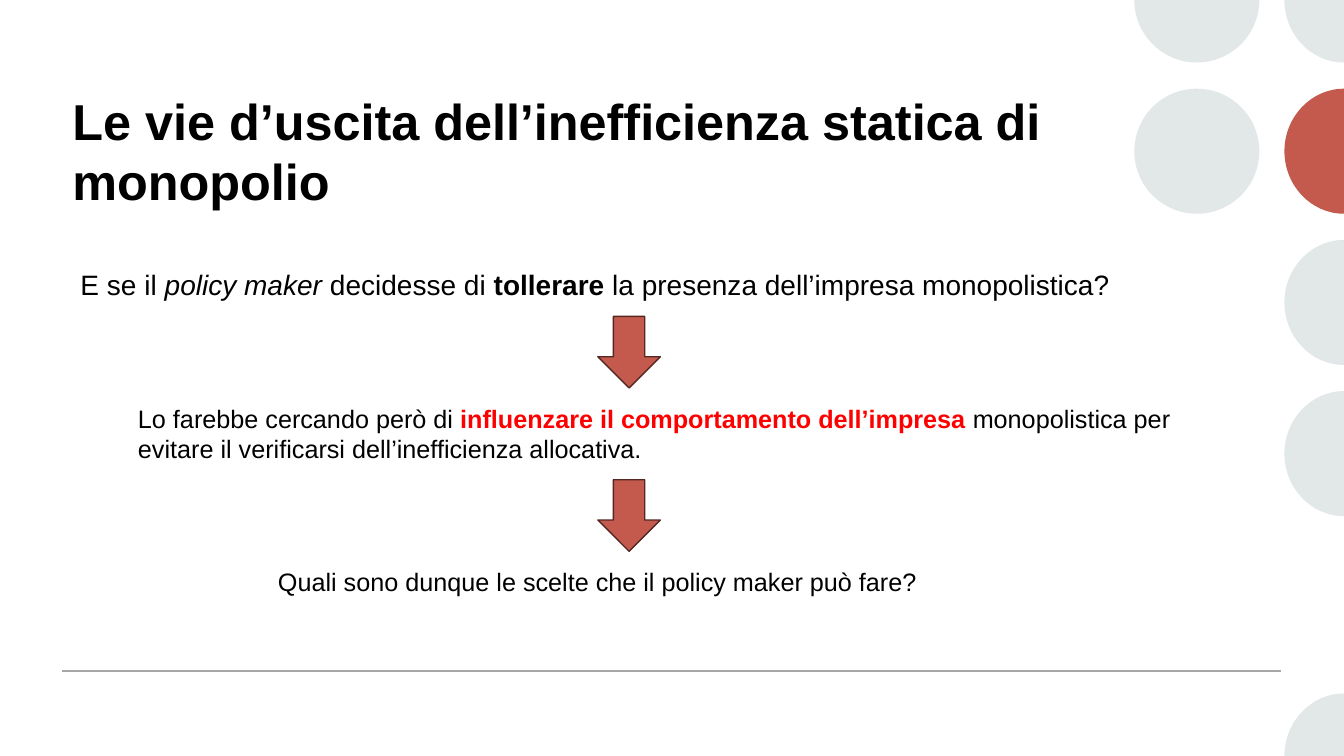
from pptx import Presentation
from pptx.dml.color import RGBColor
from pptx.enum.shapes import MSO_CONNECTOR, MSO_SHAPE
from pptx.enum.text import MSO_ANCHOR
from pptx.oxml.ns import qn
from pptx.util import Inches, Pt

THEME = {
    "font": "Arial",
    "title": 36, "question": 20, "body": 18,
    "text": RGBColor(0x00, 0x00, 0x00),
    "emphasis": RGBColor(0xFF, 0x00, 0x00),
    "pale": RGBColor(0xE2, 0xE7, 0xE8),
    "accent": RGBColor(0xC3, 0x5A, 0x4D),
    "outline": RGBColor(0x55, 0x27, 0x22),
    "rule": RGBColor(0xA6, 0xA6, 0xA6),
}

deck = Presentation()
deck.slide_width, deck.slide_height = Inches(13.333), Inches(7.5)
page = deck.slides.add_slide(deck.slide_layouts[6])
# The grid has 100 columns and 100 rows.
column, row = deck.slide_width / 100, deck.slide_height / 100


def cells(left, top, width, height):
    """Turn grid columns and rows into slide lengths."""
    return [round(length) for length in
            (left * column, top * row, width * column, height * row)]


def add_text(place, *runs, size, bold=False, anchor=MSO_ANCHOR.TOP, bottom=0.05):
    """Add one paragraph; each run is a (text, format) pair."""
    box = page.shapes.add_textbox(*place)
    box.text_frame.word_wrap = True
    box.text_frame.vertical_anchor = anchor
    box.text_frame.margin_bottom = Inches(bottom)
    para = box.text_frame.paragraphs[0]
    for text, style in runs:
        span = para.add_run()
        span.text = text
        span.font.name = THEME["font"]
        span.font.size = Pt(size)
        span.font.bold = style.get("bold", bold)
        span.font.italic = style.get("italic", False)
        span.font.color.rgb = style.get("color", THEME["text"])


# Circles: a whole one, then those cut at the slide's edge, made of quarter arcs
radius, reach, cut_reach, bend = 8.27, 4.65, 4.43, 0.55
compass = {"N": (0, -1), "W": (-1, 0), "S": (0, 1), "E": (1, 0)}
circles = [(89.05, 20, "NWSE", "pale"), (89.05, 0, "WSE", "pale"),
           (100, 100, "NW", "pale"), (100, 60, "NWS", "pale"),
           (100, 40, "NWS", "pale"), (100, 20, "NWS", "accent"),
           (100, 0, "WS", "pale")]
for x, y, sides, color in circles:
    if sides == "NWSE":
        circle = page.shapes.add_shape(
            MSO_SHAPE.OVAL, *cells(x - reach, y - radius, 2 * reach, 2 * radius))
    else:
        across = cut_reach if x == 100 else reach
        knots = [compass[side] for side in sides]
        points = [knots[0]]
        for (ax, ay), (bx, by) in zip(knots, knots[1:]):
            points += [(ax + bend * bx, ay + bend * by),
                       (bx + bend * ax, by + bend * ay), (bx, by)]
        if len(sides) == 2:
            points.append((0, 0))
        places = [(round((x + across * px) * column), round((y + radius * py) * row))
                  for px, py in points]
        outline = page.shapes.build_freeform(*places[0])
        outline.add_line_segments(places[1:], close=True)
        circle = outline.convert_to_shape()
        # Every three line ends become one Bezier arc.
        lines = list(circle._element.iter(qn("a:lnTo")))
        for start in range(0, 3 * (len(sides) - 1), 3):
            arc = lines[start].makeelement(qn("a:cubicBezTo"), {})
            lines[start].addprevious(arc)
            for line in lines[start:start + 3]:
                arc.append(line[0])
                line.getparent().remove(line)
    circle.shadow.inherit = False
    circle.fill.solid()
    circle.fill.fore_color.rgb = THEME[color]
    circle.line.fill.background()

left, level, right, _ = cells(4.65, 88.75, 95.35, 0)
footer_rule = page.shapes.add_connector(MSO_CONNECTOR.STRAIGHT, left, level, right, level)
footer_rule.line.color.rgb = THEME["rule"]
footer_rule.line.width = Pt(1)
properties = footer_rule._element.spPr
properties.append(properties.makeelement(qn("a:effectLst"), {}))

add_text(cells(4.65, 11.2, 77.34, 18.53),
         ("Le vie d’uscita dell’inefficienza statica di monopolio", {}),
         size=THEME["title"], bold=True, anchor=MSO_ANCHOR.MIDDLE, bottom=0.14)

# Statements stacked with an arrow between neighbours
arrow_height, gap = 9.47, 1.33
statements = [
    (5.25, 80.94, 5.8, THEME["question"], [
        ("E se il ", {}),
        ("policy maker ", {"italic": True}),
        ("decidesse di ", {}),
        ("tollerare", {"bold": True}),
        (" la presenza dell’impresa monopolistica?", {})]),
    (9.53, 80.94, 9.47, THEME["body"], [
        ("Lo farebbe cercando però di ", {}),
        ("influenzare il comportamento dell’impresa ",
         {"bold": True, "color": THEME["emphasis"]}),
        ("monopolistica per evitare il verificarsi dell’inefficienza allocativa.", {})]),
    (19.95, 51.54, 5.33, THEME["body"], [
        ("Quali sono dunque le scelte che il policy maker può fare?", {})]),
]
top = 34.73
for index, (left, width, height, size, runs) in enumerate(statements):
    if index:
        arrow = page.shapes.add_shape(
            MSO_SHAPE.DOWN_ARROW, *cells(44.48, top, 4.65, arrow_height))
        arrow.shadow.inherit = False
        arrow.fill.solid()
        arrow.fill.fore_color.rgb = THEME["accent"]
        arrow.line.color.rgb = THEME["outline"]
        arrow.line.width = Pt(1)
        top += arrow_height + gap
    add_text(cells(left, top, width, height), *runs, size=size)
    top += height + gap

deck.save("out.pptx")
